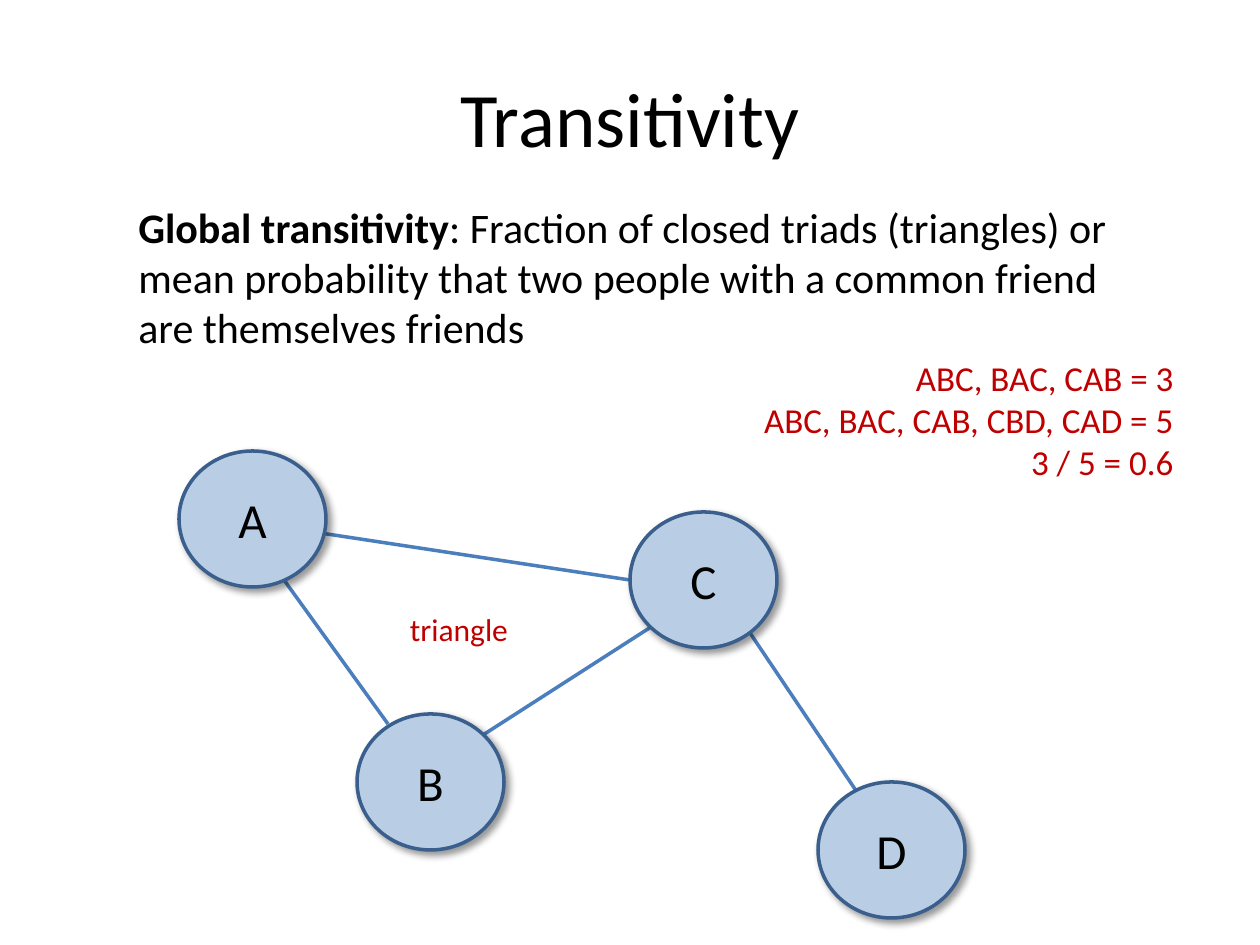
from lxml import etree
from pptx import Presentation
from pptx.dml.color import RGBColor
from pptx.enum.shapes import MSO_CONNECTOR, MSO_SHAPE
from pptx.enum.text import MSO_ANCHOR, PP_ALIGN
from pptx.oxml import parse_xml
from pptx.oxml.ns import nsdecls, qn
from pptx.util import Pt

LEFT, CENTER, RIGHT = PP_ALIGN.LEFT, PP_ALIGN.CENTER, PP_ALIGN.RIGHT
TOP, MIDDLE = MSO_ANCHOR.TOP, MSO_ANCHOR.MIDDLE
OVAL, STRAIGHT = MSO_SHAPE.OVAL, MSO_CONNECTOR.STRAIGHT

THEME = {
    "font": "Calibri",
    "text": RGBColor.from_string("000000"),
    "accent": RGBColor.from_string("C00000"),
    "node": RGBColor.from_string("B9CDE5"),
    "outline": RGBColor.from_string("3A5F8C"),
    "edge": RGBColor.from_string("4B7EBC"),
    "title_size": Pt(44),
    "node_size": Pt(28),
    "body_size": Pt(24),
    "count_size": Pt(20),
    "label_size": Pt(18),
    "stroke": Pt(2),
}
SCALE = 914400 / 126
SHADOW = (
    f'<a:effectLst {nsdecls("a")}>'
    f'<a:outerShdw blurRad="{Pt(4)}" dist="{Pt(3)}" dir="2700000" algn="tl" rotWithShape="0">'
    '<a:srgbClr val="000000"><a:alpha val="40000"/></a:srgbClr>'
    "</a:outerShdw></a:effectLst>"
)


def emu(*lengths):
    return [round(length * SCALE) for length in lengths]


def write(shape, lines, size, color, align, anchor=TOP):
    """Each line is a list of (text, bold) runs."""
    frame = shape.text_frame
    frame.word_wrap = True
    frame.vertical_anchor = anchor
    for index, runs in enumerate(lines):
        paragraph = frame.add_paragraph() if index else frame.paragraphs[0]
        paragraph.alignment = align
        for text, bold in runs:
            run = paragraph.add_run()
            run.text = text
            run.font.name = THEME["font"]
            run.font.size = THEME[size]
            run.font.bold = bold
            run.font.color.rgb = THEME[color]


presentation = Presentation()
presentation.slide_width, presentation.slide_height = emu(1260, 945)
slide = presentation.slides.add_slide(presentation.slide_layouts[6])
shapes = slide.shapes

# Title, triangle label, worked count and definition
text_blocks = [
    ((63, 38, 1134, 158), [[("Transitivity", False)]],
     "title_size", "text", CENTER, MIDDLE),
    ((275, 604, 368, 50), [[("triangle", False)]],
     "label_size", "accent", CENTER, TOP),
    ((703, 350, 483, 140),
     [[("ABC, BAC, CAB = 3", False)],
      [("ABC, BAC, CAB, CBD, CAD = 5", False)],
      [("3 / 5 = 0.6", False)]],
     "count_size", "accent", RIGHT, TOP),
    ((126, 195, 998, 165),
     [[("Global transitivity", True),
       (": Fraction of closed triads (triangles) or", False)],
      [("mean probability that two people with a common friend "
        "are themselves friends", False)]],
     "body_size", "text", LEFT, TOP),
]
for box, lines, size, color, align, anchor in text_blocks:
    write(shapes.add_textbox(*emu(*box)), lines, size, color, align, anchor)

# Friendships, drawn beneath the people
edges = [
    (284, 580, 388, 724),  # A to B
    (294, 529, 630, 580),  # A to C
    (651, 627, 483, 735),  # C to B
    (746, 627, 861, 798),  # C to D
]
for ends in edges:
    edge = shapes.add_connector(STRAIGHT, *emu(*ends))
    edge.line.color.rgb = THEME["edge"]
    edge.line.width = THEME["stroke"]
    etree.SubElement(edge._element.spPr, qn("a:effectLst"))

# People
nodes = {"B": (357, 714), "C": (630, 512), "D": (818, 782), "A": (179, 451)}
for name, (left, top) in nodes.items():
    node = shapes.add_shape(OVAL, *emu(left, top, 147, 136))
    node.fill.solid()
    node.fill.fore_color.rgb = THEME["node"]
    node.line.color.rgb = THEME["outline"]
    node.line.width = THEME["stroke"]
    node._element.spPr.append(parse_xml(SHADOW))
    write(node, [[(name, False)]], "node_size", "text", CENTER, MIDDLE)

presentation.save("out.pptx")
